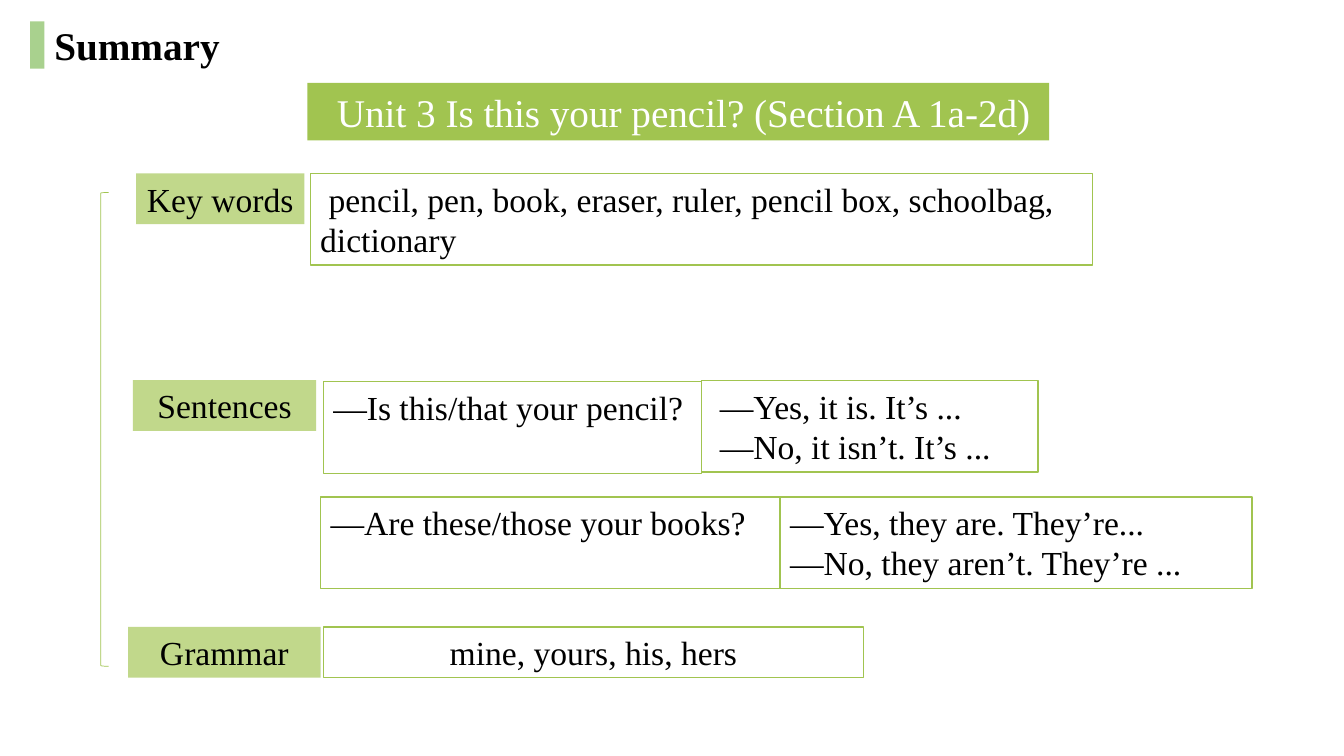
"""Build the unit summary slide with key words, sentences and grammar."""
from lxml import etree
from pptx import Presentation
from pptx import util as u
from pptx.dml.color import RGBColor
from pptx.enum import shapes, text
from pptx.oxml.ns import qn

C = {"bar": "A9D18E", "green": "A1C450", "black": "000000", "white": "FFFFFF"}
FONT = "Times New Roman"
LEFT, CENTER = text.PP_ALIGN.LEFT, text.PP_ALIGN.CENTER
PAD, SPACE = 0.25, 0.21

TITLE = ("Summary", (1.12, 0.41, 4.72, 1.45))
BAR = (0.76, 0.54, 0.36, 1.19)
BANNER = ("Unit 3 Is this your pencil? (Section A 1a-2d)", (7.75, 2.09, 18.69, 1.45))
BRACKET = (2.54, 4.85, 0.2, 11.94)
LABELS = [
    ("Key words", (3.43, 4.37, 4.24, 1.28)),
    ("Sentences", (3.35, 9.58, 4.62, 1.28)),
    ("Grammar", (3.23, 15.8, 4.85, 1.28)),
]
BOXES = [
    ([" pencil, pen, book, eraser, ruler, pencil box, schoolbag, dictionary"],
     (7.82, 4.37, 19.71, 2.31), LEFT, 1, PAD),
    (["—Is this/that your pencil?"], (8.15, 9.62, 9.53, 2.31), LEFT, 1, PAD),
    (["—Yes, it is. It’s ...", "—No, it isn’t. It’s ..."],
     (17.68, 9.59, 8.48, 2.31), LEFT, 1, PAD + SPACE),
    (["—Are these/those your books?"], (8.08, 12.52, 11.58, 2.31), LEFT, 1, PAD),
    (["—Yes, they are. They’re...", "—No, they aren’t. They’re ..."],
     (19.66, 12.52, 11.89, 2.31), LEFT, 1, PAD),
    (["mine, yours, his, hers"], (8.15, 15.8, 13.61, 1.28), CENTER, 0.75, PAD),
]


def rgb(name):
    return RGBColor.from_string(C[name])


def write(sp, lines, size=24, color="black", align=LEFT, pad=PAD, bold=False,
          wrap=True, anchor=text.MSO_ANCHOR.TOP):
    tf = sp.text_frame
    frame = {"word_wrap": wrap, "auto_size": text.MSO_AUTO_SIZE.NONE,
             "vertical_anchor": anchor, "margin_left": u.Cm(pad),
             "margin_right": u.Cm(PAD), "margin_top": u.Cm(0.13),
             "margin_bottom": u.Cm(0.13)}
    for key, value in frame.items():
        setattr(tf, key, value)
    for i, line in enumerate(lines):
        p = tf.paragraphs[0] if i == 0 else tf.add_paragraph()
        p.alignment = align
        r = p.add_run()
        r.text = line
        for key, value in {"name": FONT, "size": u.Pt(size), "bold": bold}.items():
            setattr(r.font, key, value)
        r.font.color.rgb = rgb(color)


def add(s, at, fill=None, line=None, alpha=None, kind=shapes.MSO_SHAPE.RECTANGLE):
    sp = s.shapes.add_shape(kind, *map(u.Cm, at))
    sp.shadow.inherit = False
    if fill:
        sp.fill.solid()
        sp.fill.fore_color.rgb = rgb(fill)
    else:
        sp.fill.background()
    if alpha:
        clr = sp.fill._xPr.find(qn("a:solidFill"))[0]
        etree.SubElement(clr, qn("a:alpha")).set("val", str(alpha * 1000))
    if line:
        sp.line.color.rgb = rgb("green")
        sp.line.width = u.Pt(line)
    else:
        sp.line.fill.background()
    return sp


def main():
    prs = Presentation()
    prs.slide_width, prs.slide_height = u.Cm(33.87), u.Cm(19.05)
    s = prs.slides.add_slide(prs.slide_layouts[5])

    add(s, BAR, fill="bar")
    words, at = TITLE
    title = s.shapes.title
    for key, value in zip(("left", "top", "width", "height"), at):
        setattr(title, key, u.Cm(value))
    write(title, [words], size=28, bold=True, wrap=False)

    words, at = BANNER
    write(add(s, at, fill="green"), [words], size=28, color="white",
          pad=PAD + 0.49)
    for words, at in LABELS:
        write(add(s, at, fill="green", alpha=66), [words], align=CENTER)
    for lines, at, align, width, pad in BOXES:
        write(add(s, at, line=width), lines, align=align, pad=pad)
    add(s, BRACKET, line=0.5, kind=shapes.MSO_SHAPE.LEFT_BRACKET)

    prs.save("out.pptx")


if __name__ == "__main__":
    main()
